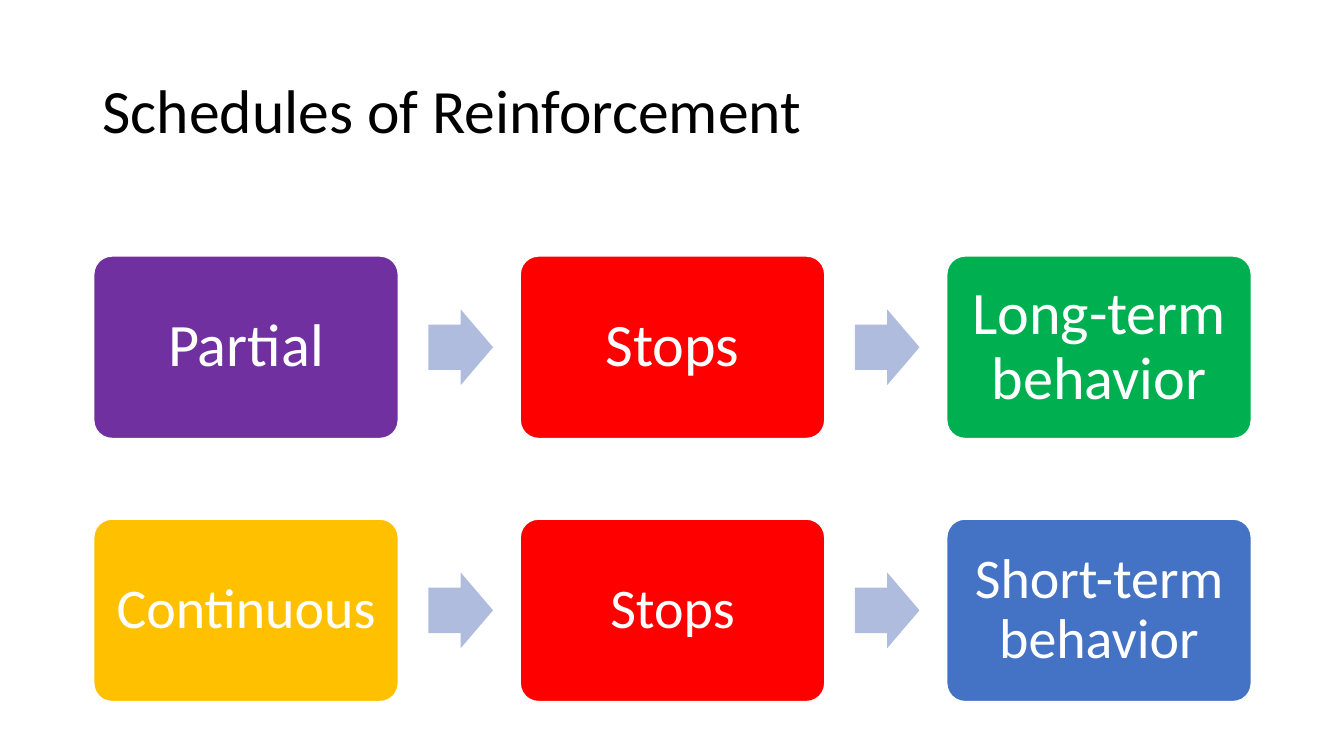
from pptx import Presentation
from pptx.dml.color import RGBColor
from pptx.enum.shapes import MSO_SHAPE
from pptx.enum.text import MSO_ANCHOR, PP_ALIGN
from pptx.util import Inches, Pt

COLORS = {
    "black": "000000",
    "white": "FFFFFF",
    "purple": "7030A0",
    "red": "FF0000",
    "green": "00B050",
    "gold": "FFC000",
    "blue": "4472C4",
    "arrow": "B0BCDE",
}
STEP_LEFT, STEP_PITCH = 0.93, 4.23
STEP_WIDTH, STEP_HEIGHT = 3.02, 1.81
ARROW_OFFSET, ARROW_WIDTH, ARROW_HEIGHT = 3.32, 0.64, 0.75
FLOWS = [
    {"top": 2.54, "size": 43, "inset": 0.18,
     "steps": [("Partial", "purple"), ("Stops", "red"), ("Long-term behavior", "green")]},
    {"top": 5.15, "size": 40, "inset": 0.17,
     "steps": [("Continuous", "gold"), ("Stops", "red"), ("Short-term behavior", "blue")]},
]


def color(name):
    return RGBColor.from_string(COLORS[name])


def apply_format(target, values):
    for name, value in values.items():
        setattr(target, name, value)


class SlideBuilder:
    """Draws the elements of one slide in a shared style."""

    font = "Calibri"

    def __init__(self, page):
        self.page = page

    def add_text(self, box, text, size, ink, align, inset_x, inset_y):
        frame = box.text_frame
        apply_format(frame, {
            "word_wrap": True,
            "vertical_anchor": MSO_ANCHOR.MIDDLE,
            "margin_left": Inches(inset_x),
            "margin_right": Inches(inset_x),
            "margin_top": Inches(inset_y),
            "margin_bottom": Inches(inset_y),
        })
        para = frame.paragraphs[0]
        apply_format(para, {"alignment": align, "line_spacing": 0.9})
        span = para.add_run()
        span.text = text
        apply_format(span.font, {"name": self.font, "size": Pt(size)})
        span.font.color.rgb = color(ink)

    def title(self, text):
        box = self.page.shapes.add_textbox(
            Inches(0.92), Inches(0.4), Inches(11.5), Inches(1.45))
        self.add_text(box, text, 44, "black", PP_ALIGN.LEFT, 0.1, 0.05)

    def shape(self, group, kind, bounds, fill, adjustments):
        shape = group.shapes.add_shape(kind, *map(Inches, bounds))
        shape.shadow.inherit = False
        shape.fill.solid()
        shape.fill.fore_color.rgb = color(fill)
        for index, value in enumerate(adjustments):
            shape.adjustments[index] = value
        return shape

    def step(self, group, left, flow, text, fill):
        box = self.shape(group, MSO_SHAPE.ROUNDED_RECTANGLE,
                         (left, flow["top"], STEP_WIDTH, STEP_HEIGHT), fill, [0.1])
        box.line.color.rgb = color("white")
        box.line.width = Pt(1)
        self.add_text(box, text, flow["size"], "white", PP_ALIGN.CENTER,
                      flow["inset"], flow["inset"])

    def arrow(self, group, left, top):
        arrow = self.shape(group, MSO_SHAPE.RIGHT_ARROW,
                           (left, top, ARROW_WIDTH, ARROW_HEIGHT), "arrow", [0.6, 0.5])
        arrow.line.fill.background()

    def flow(self, flow):
        """Draws a row of steps with an arrow between neighbours."""
        group = self.page.shapes.add_group_shape()
        arrow_top = flow["top"] + (STEP_HEIGHT - ARROW_HEIGHT) / 2
        for index, (text, fill) in enumerate(flow["steps"]):
            left = STEP_LEFT + index * STEP_PITCH
            if index:
                self.arrow(group, left - STEP_PITCH + ARROW_OFFSET, arrow_top)
            self.step(group, left, flow, text, fill)


def main():
    deck = Presentation()
    deck.slide_width, deck.slide_height = Inches(13.33), Inches(7.5)
    builder = SlideBuilder(deck.slides.add_slide(deck.slide_layouts[6]))
    builder.title("Schedules of Reinforcement")
    for flow in FLOWS:
        builder.flow(flow)
    deck.save("out.pptx")


if __name__ == "__main__":
    main()
